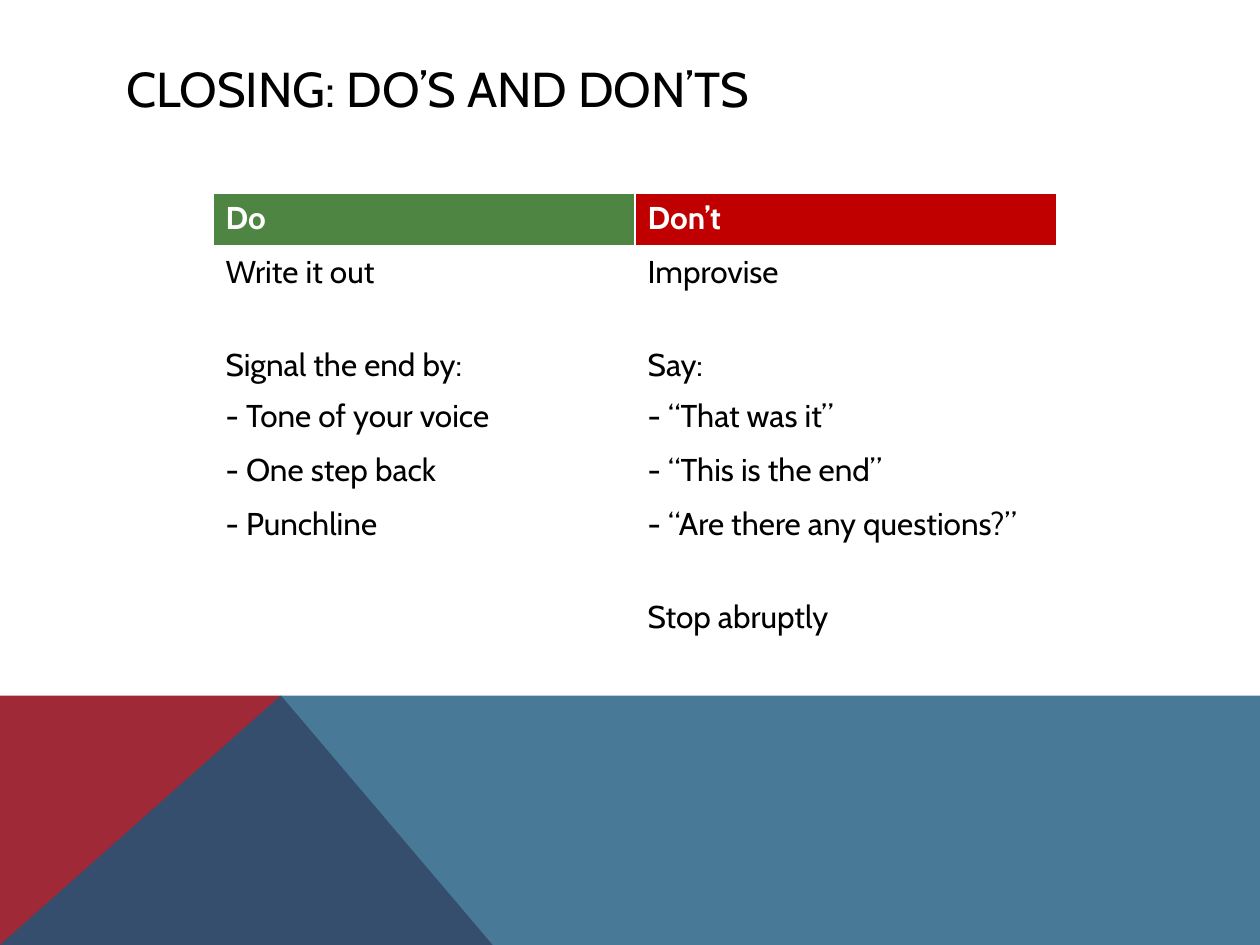
from lxml.etree import SubElement
from pptx import Presentation
from pptx.dml.color import RGBColor
from pptx.enum.text import MSO_ANCHOR, PP_ALIGN
from pptx.oxml.ns import qn
from pptx.util import Inches, Pt


def color(hex_code):
    return RGBColor.from_string(hex_code)


def format_paragraph(paragraph, size, hex_code, bold=False):
    paragraph.alignment = PP_ALIGN.LEFT
    paragraph.font.name = "Cabin"
    paragraph.font.size = Pt(size)
    paragraph.font.bold = bold
    paragraph.font.color.rgb = color(hex_code)


presentation = Presentation()
presentation.slide_width = Inches(10)
presentation.slide_height = Inches(7.5)
slide = presentation.slides.add_slide(presentation.slide_layouts[5])

# Bottom band: a red wedge under a translucent blue area
bands = [
    ("9F2936", 100, [(0, 7.5), (0, 5.52), (2.23, 5.52), (3.91, 7.5)]),
    ("1B587C", 80, [(0, 7.5), (2.23, 5.52), (10, 5.52), (10, 7.5)]),
]
for fill, opacity, points in bands:
    corners = [(Inches(x), Inches(y)) for x, y in points]
    builder = slide.shapes.build_freeform(*corners[0])
    builder.add_line_segments(corners[1:], close=True)
    shape = builder.convert_to_shape()
    shape.shadow.inherit = False
    shape.fill.solid()
    shape.fill.fore_color.rgb = color(fill)
    shape.line.fill.background()
    if opacity < 100:
        fill_color = shape.element.spPr.find(qn("a:solidFill"))[0]
        SubElement(fill_color, qn("a:alpha"), val=str(opacity * 1000))

# Title
title = slide.shapes.title
title.left, title.top = Inches(0.9), Inches(0.4)
title.width, title.height = Inches(8.22), Inches(0.6)
title.text_frame.text = "CLOSING: DO’S AND DON’TS"
title.text_frame.vertical_anchor = MSO_ANCHOR.MIDDLE
format_paragraph(title.text_frame.paragraphs[0], 28, "000000")

# Table: taller rows open each new group, with their text at the bottom
ROW, GROUP_ROW = 0.43, 0.71
rows = [
    (ROW, "Do", "Don’t"),
    (ROW, "Write it out", "Improvise"),
    (GROUP_ROW, "Signal the end by:", "Say:"),
    (ROW, "- Tone of your voice", "- “That was it”"),
    (ROW, "- One step back", "- “This is the end”"),
    (ROW, "- Punchline", "- “Are there any questions?”"),
    (GROUP_ROW, "", "Stop abruptly"),
]
header_fills = ["4E8542", "C00000"]
table_height = sum(row[0] for row in rows)
table = slide.shapes.add_table(
    len(rows), 2, Inches(1.69), Inches(1.53), Inches(6.7), Inches(table_height)
).table

for row_index, (height, *texts) in enumerate(rows):
    table.rows[row_index].height = Inches(height)
    is_header = row_index == 0
    for column_index, text in enumerate(texts):
        cell = table.cell(row_index, column_index)
        cell.text = text
        cell.vertical_anchor = MSO_ANCHOR.BOTTOM if height == GROUP_ROW else MSO_ANCHOR.TOP
        format_paragraph(
            cell.text_frame.paragraphs[0], 18, "FFFFFF" if is_header else "000000", is_header
        )

        # White borders, heavier below the header; they precede the fill
        properties = cell._tc.get_or_add_tcPr()
        for side in ("lnL", "lnR", "lnT", "lnB"):
            width = 3 if is_header and side == "lnB" else 1
            border = SubElement(properties, qn(f"a:{side}"), w=str(Pt(width)))
            border_fill = SubElement(border, qn("a:solidFill"))
            SubElement(border_fill, qn("a:srgbClr"), val="FFFFFF")
        cell.fill.solid()
        cell.fill.fore_color.rgb = color(header_fills[column_index] if is_header else "FFFFFF")

presentation.save("out.pptx")
